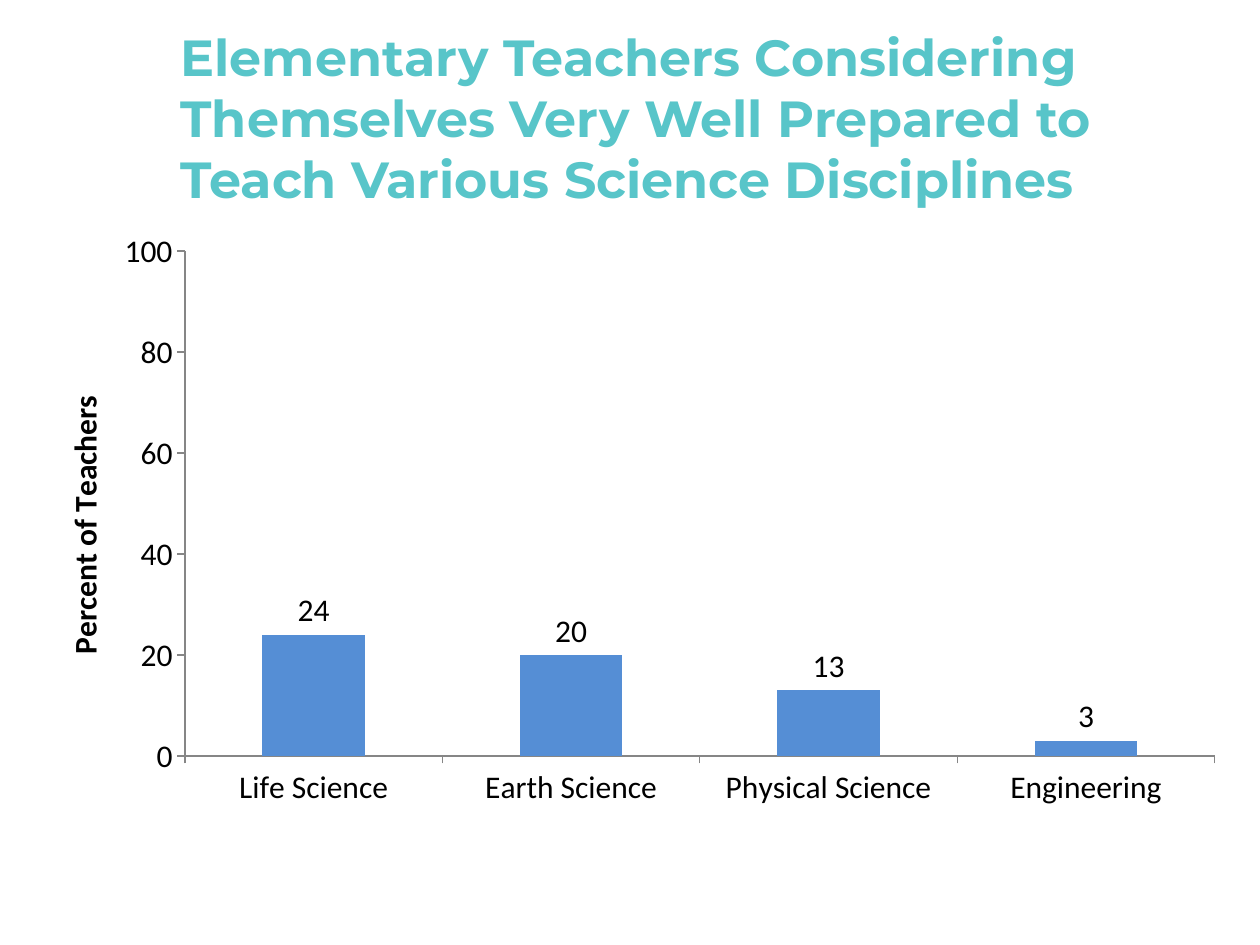
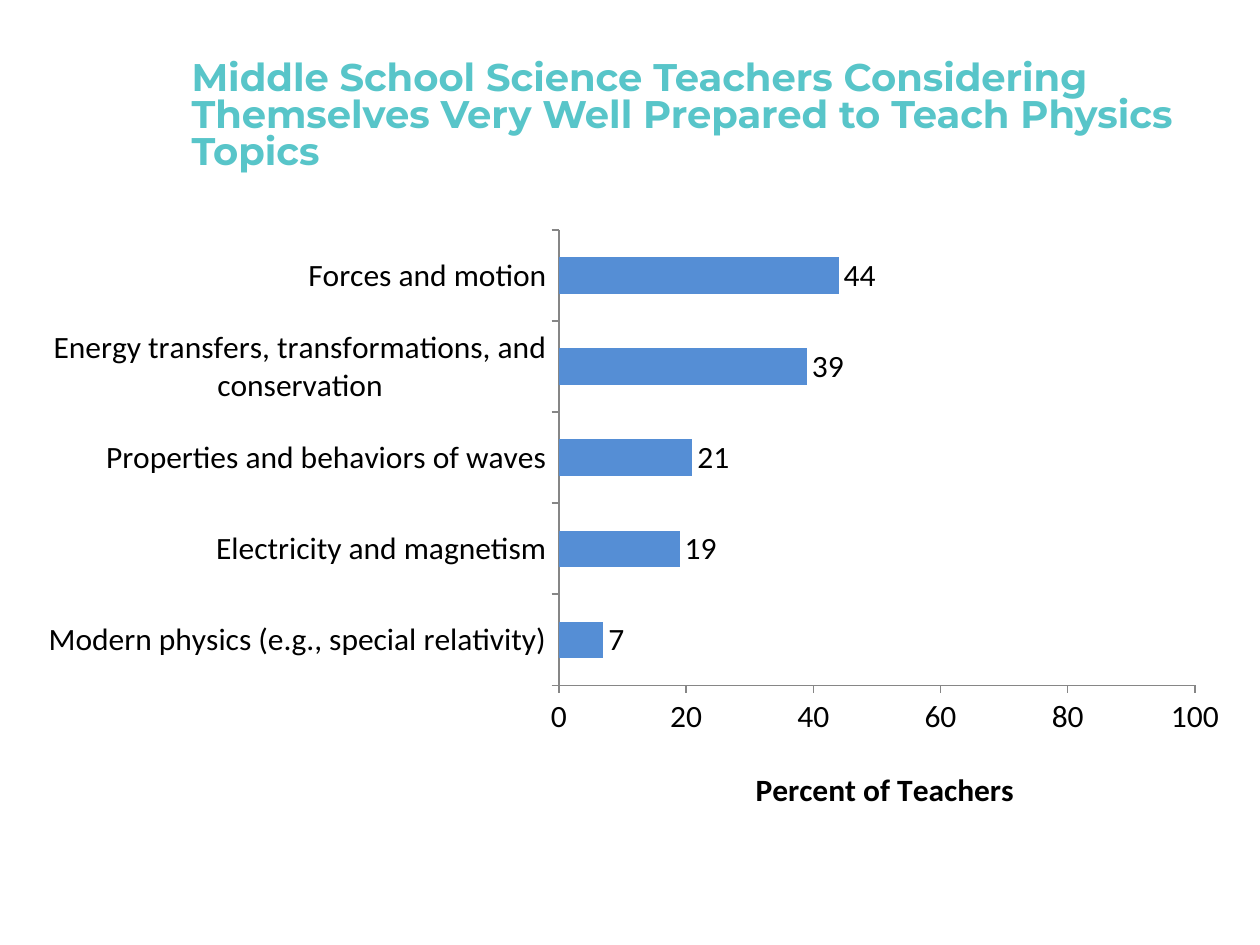
from dataclasses import dataclass

from lxml.etree import SubElement
from pptx import Presentation
from pptx.chart.data import CategoryChartData
from pptx.dml.color import RGBColor
from pptx.enum.chart import XL_CHART_TYPE as ChartType
from pptx.enum.chart import XL_LABEL_POSITION as LabelPosition
from pptx.enum.chart import XL_TICK_MARK as TickMark
from pptx.enum.text import MSO_ANCHOR as Anchor
from pptx.enum.text import MSO_AUTO_SIZE as AutoSize
from pptx.enum.text import PP_ALIGN as Align
from pptx.oxml.ns import qn
from pptx.util import Pt


@dataclass(frozen=True)
class Theme:
    title_color: RGBColor = RGBColor(0x58, 0xC5, 0xC9)
    bar_color: RGBColor = RGBColor(0x55, 0x8E, 0xD5)
    axis_color: RGBColor = RGBColor(0x86, 0x86, 0x86)
    text_color: RGBColor = RGBColor(0, 0, 0)
    title_font: str = "Montserrat"
    chart_font: str = "Calibri"
    large_title: Pt = Pt(29)
    small_title: Pt = Pt(22)
    chart_size: Pt = Pt(18)
    axis_width: Pt = Pt(0.75)


THEME = Theme()
PX_PER_INCH = 126
TITLE_ONLY = 5
CHART_FONT = {"name": THEME.chart_font, "size": THEME.chart_size}


def px(length):
    return round(length * 914400 / PX_PER_INCH)


def set_all(target, values):
    for name, value in values.items():
        setattr(target, name, value)


def set_font(font, color, **values):
    set_all(font, values)
    font.color.rgb = color


# Title placeholder, moved and restyled
def place_title(slide, box, text, size, line_spacing):
    title = slide.shapes.title
    set_all(title, dict(zip(("left", "top", "width", "height"), map(px, box))))
    frame = title.text_frame
    frame.text = text
    set_all(frame, {"auto_size": AutoSize.NONE, "word_wrap": True,
                    "vertical_anchor": Anchor.MIDDLE})
    paragraph = frame.paragraphs[0]
    set_all(paragraph, {"alignment": Align.LEFT, "line_spacing": line_spacing})
    set_font(paragraph.runs[0].font, THEME.title_color,
             name=THEME.title_font, size=size, bold=True)


# Manual layout of a chart part, in fractions of the chart box
def set_layout(parent, index, fractions, inner=False):
    for old_layout in parent.findall(qn("c:layout")):
        parent.remove(old_layout)
    layout = parent.makeelement(qn("c:layout"))
    parent.insert(index, layout)
    manual = SubElement(layout, qn("c:manualLayout"))
    settings = [("layoutTarget", "inner")] if inner else []
    settings += [("xMode", "edge"), ("yMode", "edge")]
    settings += zip("xywh", fractions)
    for tag, value in settings:
        SubElement(manual, qn(f"c:{tag}")).set("val", str(value))


def relative(box, part):
    """Turn a part's px offsets within the chart box into fractions."""
    return [round(value / box[2 + i % 2], 4) for i, value in enumerate(part)]


def format_axes(chart):
    for axis in (chart.category_axis, chart.value_axis):
        set_all(axis, {"has_major_gridlines": False,
                       "major_tick_mark": TickMark.OUTSIDE,
                       "minor_tick_mark": TickMark.NONE})
        axis.format.line.color.rgb = THEME.axis_color
        axis.format.line.width = THEME.axis_width
    set_all(chart.value_axis, {"minimum_scale": 0, "maximum_scale": 100,
                               "major_unit": 20})


# Single-series percentage chart
def place_chart(slide, box, kind, values, plot_area, axis_title_at):
    data = CategoryChartData()
    data.categories = list(values)
    data.add_series("Series 1", list(values.values()))
    chart = slide.shapes.add_chart(kind, *map(px, box), data).chart
    set_all(chart, {"has_title": False, "has_legend": False})
    set_font(chart.font, THEME.text_color, **CHART_FONT)
    format_axes(chart)

    # Bars and value labels
    plot = chart.plots[0]
    set_all(plot, {"gap_width": 151, "vary_by_categories": False,
                   "has_data_labels": True})
    set_all(plot.data_labels, {"show_value": True,
                               "position": LabelPosition.OUTSIDE_END})
    set_font(plot.data_labels.font, THEME.text_color, **CHART_FONT)
    fill = plot.series[0].format.fill
    fill.solid()
    fill.fore_color.rgb = THEME.bar_color
    set_layout(plot._element.getparent(), 0, relative(box, plot_area), inner=True)

    # Value axis title
    axis_title = chart.value_axis.axis_title
    axis_title.text_frame.text = "Percent of Teachers"
    run = axis_title.text_frame.paragraphs[0].runs[0]
    set_font(run.font, THEME.text_color, bold=True, **CHART_FONT)
    set_layout(axis_title._element, 1, relative(box, axis_title_at))


SLIDES = [
    {
        "title": {
            "box": (168, 38, 1029, 158),
            "text": "Elementary Teachers Considering Themselves Very Well "
                    "Prepared to Teach Various Science Disciplines",
            "size": THEME.large_title,
            "line_spacing": 1.0,
        },
        "chart": {
            "box": (21, 220, 1218, 599),
            "kind": ChartType.COLUMN_CLUSTERED,
            "values": {"Life Science": 24, "Earth Science": 20,
                       "Physical Science": 13, "Engineering": 3},
            "plot_area": (164, 31, 1030, 505),
            "axis_title_at": (36, 170),
        },
    },
    {
        "title": {
            "box": (179, 38, 1018, 158),
            "text": "Middle School Science Teachers Considering Themselves Very "
                    "Well Prepared to Teach Physics Topics",
            "size": THEME.small_title,
            "line_spacing": 0.8,
        },
        "chart": {
            "box": (21, 179, 1218, 640),
            "kind": ChartType.BAR_CLUSTERED,
            "values": {
                "Modern physics (e.g., special relativity)": 7,
                "Electricity and magnetism": 19,
                "Properties and behaviors of waves": 21,
                "Energy transfers, transformations, and conservation": 39,
                "Forces and motion": 44,
            },
            "plot_area": (538, 52, 636, 463),
            "axis_title_at": (729, 594),
        },
    },
]


def main():
    presentation = Presentation()
    set_all(presentation, {"slide_width": px(1260), "slide_height": px(945)})
    for content in SLIDES:
        slide = presentation.slides.add_slide(presentation.slide_layouts[TITLE_ONLY])
        place_title(slide, **content["title"])
        place_chart(slide, **content["chart"])
    presentation.save("out.pptx")


if __name__ == "__main__":
    main()
